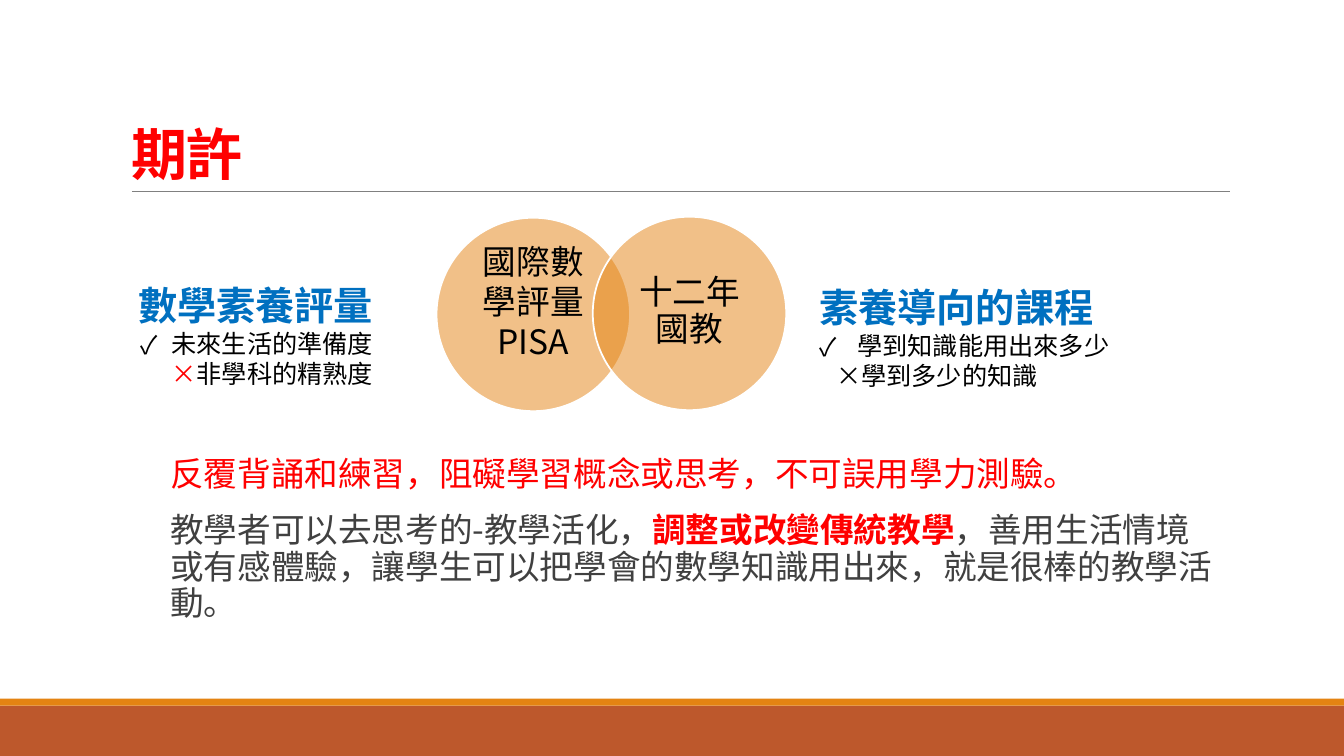
from lxml.etree import SubElement
from pptx import Presentation
from pptx.dml.color import RGBColor
from pptx.enum.shapes import MSO_CONNECTOR, MSO_SHAPE
from pptx.enum.text import MSO_ANCHOR as ANCHOR, PP_ALIGN as ALIGN
from pptx.oxml.ns import qn
from pptx.util import Pt

# Content: a run is (text, size, colour, bold)
FONT = "Noto Sans CJK SC"
RED, BLUE, GREY, BLACK = "FF0000", "0070C0", "404040", "000000"
ORANGE, RUST, WHITE, RULE = "E48312", "BD582C", "FFFFFF", "808080"

TITLE = ("期許", 40, RED, True)
BARS = [(504, 36, RUST), (499, 5, ORANGE)]  # top, height, colour

# left of circle, top of circle, middle of text, line spacing, text
CIRCLES = [
    (311.8, 155.5, 215, 1, "國際數學評量PISA"),
    (423.4, 154.8, 223, 0.9, "十二年國教"),
]
CIRCLE_SIZE, LABEL_SIZE = 138.2, 98

# left, top, width, alignment, bullet indent, cross indent, heading, tick, cross
LISTS = [
    (69.8, 197.3, 203.8, ALIGN.RIGHT, 22.5, 0, "數學素養評量",
     "未來生活的準備度", [("×", 18, RED, False), ("非學科的精熟度", 18, BLACK, False)]),
    (578.2, 198.5, 250, ALIGN.LEFT, 27, 12, "素養導向的課程",
     "學到知識能用出來多少", [("×學到多少的知識", 18, BLACK, False)]),
]

BODY = [
    [("反覆背誦和練習，阻礙學習概念或思考，不可誤用學力測驗。", 24, RED, False)],
    [("教學者可以去思考的-教學活化，", 24, GREY, False),
     ("調整或改變傳統教學", 24, RED, True),
     ("，善用生活情境或有感體驗，讓學生可以把學會的數學知識用出來，"
      "就是很棒的教學活動。", 24, GREY, False)],
]


def color(value):
    return RGBColor.from_string(value)


def add_runs(paragraph, runs):
    for text, size, value, bold in runs:
        run = paragraph.add_run()
        run.text = text
        run.font.name = FONT
        run.font.size = Pt(size)
        run.font.bold = bold
        run.font.color.rgb = color(value)
        SubElement(run._r.get_or_add_rPr(), qn("a:ea"), typeface=FONT)


def add_text(left, top, width, height, paragraphs, align=ALIGN.LEFT,
             anchor=ANCHOR.TOP, side=7.2, edge=3.6):
    box = slide.shapes.add_textbox(Pt(left), Pt(top), Pt(width), Pt(height))
    frame = box.text_frame
    frame.word_wrap = True
    frame.vertical_anchor = anchor
    frame.margin_left = frame.margin_right = Pt(side)
    frame.margin_top = frame.margin_bottom = Pt(edge)
    for index, runs in enumerate(paragraphs):
        paragraph = frame.add_paragraph() if index else frame.paragraphs[0]
        paragraph.alignment = align
        add_runs(paragraph, runs)
    return frame.paragraphs


def indent(paragraph, margin, bullet=None):
    properties = paragraph._p.get_or_add_pPr()
    properties.set("marL", str(Pt(margin)))
    if bullet:
        properties.set("indent", str(-Pt(margin)))
        SubElement(properties, qn("a:buFont"), typeface=FONT)
        SubElement(properties, qn("a:buChar"), char=bullet)


def add_filled(kind, left, top, width, height, fill):
    shape = slide.shapes.add_shape(kind, Pt(left), Pt(top), Pt(width), Pt(height))
    shape.shadow.inherit = False
    shape.fill.solid()
    shape.fill.fore_color.rgb = color(fill)
    shape.line.fill.background()
    return shape


presentation = Presentation()
presentation.slide_width, presentation.slide_height = Pt(960), Pt(540)
slide = presentation.slides.add_slide(presentation.slide_layouts[5])

# Bottom bars and the rule under the title
for top, height, fill in BARS:
    add_filled(MSO_SHAPE.RECTANGLE, 0, top, 960, height, fill)
rule = slide.shapes.add_connector(
    MSO_CONNECTOR.STRAIGHT, Pt(94.3), Pt(136.8), Pt(878.4), Pt(136.8))
rule.line.color.rgb = color(RULE)
rule.line.width = Pt(0.5)
SubElement(rule._element.spPr, qn("a:effectLst"))

# Title
title = slide.shapes.title
title.left, title.top, title.width, title.height = Pt(86.4), Pt(22.3), Pt(792), Pt(114.5)
title.text_frame.vertical_anchor = ANCHOR.BOTTOM
heading = title.text_frame.paragraphs[0]
heading.alignment = ALIGN.LEFT
heading.line_spacing = 0.85
add_runs(heading, [TITLE])
heading.runs[0]._r.get_or_add_rPr().set("spc", "-50")

# Overlapping circles with their labels
for left, top, middle, spacing, label in CIRCLES:
    circle = add_filled(MSO_SHAPE.OVAL, left, top, CIRCLE_SIZE, CIRCLE_SIZE, ORANGE)
    fill_color = circle._element.spPr.find(qn("a:solidFill"))[0]
    SubElement(fill_color, qn("a:alpha"), val="50000")
    circle.line.color.rgb = color(WHITE)
    circle.line.width = Pt(1.25)
    paragraphs = add_text(
        left + (CIRCLE_SIZE - LABEL_SIZE) / 2, middle - LABEL_SIZE / 2,
        LABEL_SIZE, LABEL_SIZE, [[(label, 24, BLACK, False)]],
        ALIGN.CENTER, ANCHOR.MIDDLE, 7.9, 2.2)
    paragraphs[0].line_spacing = spacing

# Lists on both sides
for left, top, width, align, tick_indent, cross_indent, name, tick, cross in LISTS:
    paragraphs = add_text(
        left, top, width, 85,
        [[(name, 28, BLUE, True)], [(tick, 18, BLACK, False)], cross], align)
    indent(paragraphs[1], tick_indent, "✓")
    indent(paragraphs[2], cross_indent)

# Closing text
for paragraph in add_text(121.7, 323.5, 745.9, 150, BODY, side=0):
    paragraph.line_spacing = 0.9
    paragraph.space_before, paragraph.space_after = Pt(12), Pt(2)

presentation.save("out.pptx")
